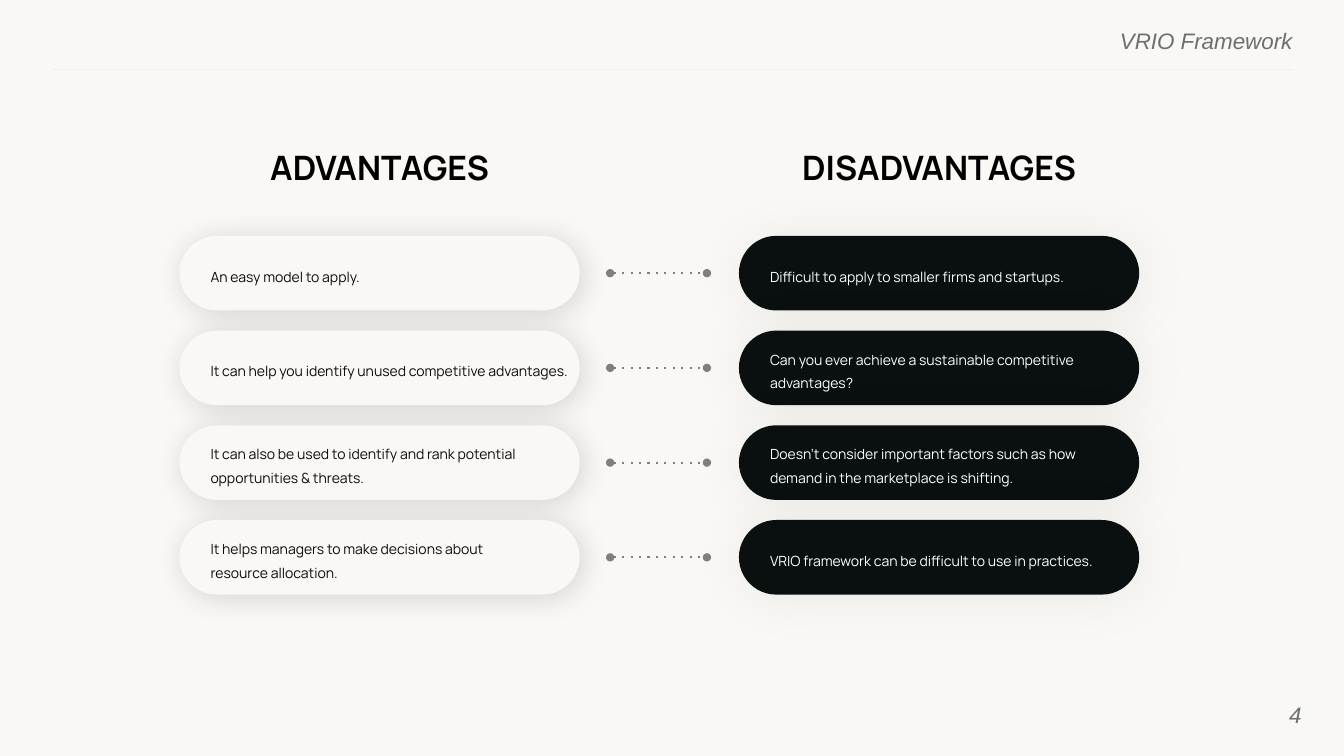
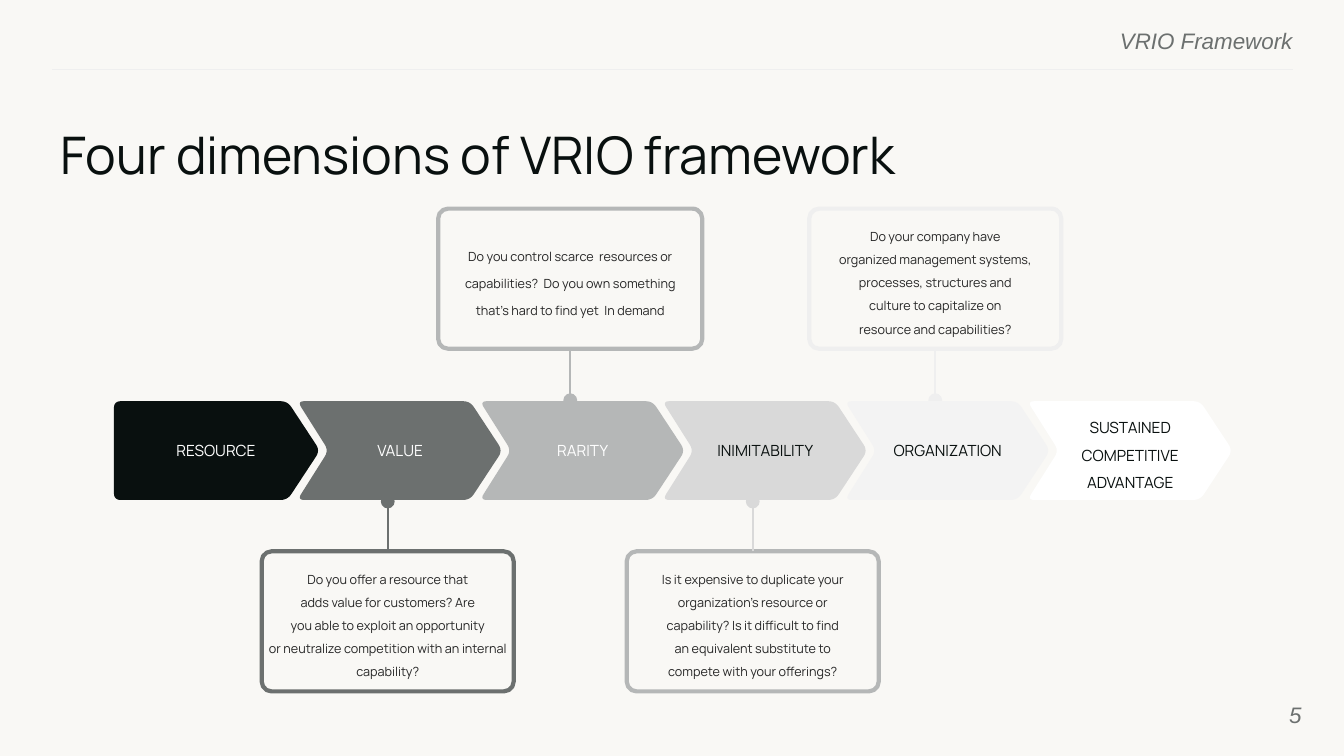
import math

import pptx
import pptx.dml.color
import pptx.enum.shapes
import pptx.enum.text
import pptx.oxml
import pptx.oxml.ns
import pptx.util
from lxml import etree

COLORS = {"paper": "F9F8F5", "rule": "EFEFEF", "slate": "6C706F", "ink": "09100F",
          "body": "0C0C0C", "note": "262626", "black": "000000", "white": "FFFFFF",
          "dots": "7F7F7F", "silver": "B5B7B7", "light": "D9D9D9", "pale": "F3F3F3"}
FONT, FRAME_FONT = "Manrope", "Arial"
SHAPE = pptx.enum.shapes.MSO_SHAPE
ALIGN = pptx.enum.text.PP_ALIGN
ANCHOR = pptx.enum.text.MSO_ANCHOR
SLIDE_W, SLIDE_H = pptx.util.Inches(13.33), pptx.util.Inches(7.5)

# Advantages and disadvantages: the grid has 100 columns and 100 rows
LEFT_COL, RIGHT_COL, COL_W = 13.35, 54.98, 29.78
HEAD_Y, HEAD_H = 19.47, 5.33
PILL_Y, PILL_H, PILL_STEP = 31.2, 9.87, 12.53
ADVANTAGES = [
    ["An easy model to apply."],
    ["It can help you identify unused competitive advantages."],
    ["It can also be used to identify and rank potential opportunities & threats."],
    ["It helps managers to make decisions about", "resource allocation."]]
DISADVANTAGES = [
    ["Difficult to apply to smaller firms and startups."],
    ["Can you ever achieve a sustainable competitive advantages?"],
    ["Doesn’t consider important factors such as how demand in the marketplace is shifting."],
    ["VRIO framework can be difficult to use in practices."]]

# Chain of chevrons and its callouts
CHAIN_X, CHAIN_Y, CHAIN_H, CHAIN_STEP = 8.77, 53.07, 13.07, 13.58
CALLOUT_H, UPPER_Y, LOWER_Y = 18.53, 27.6, 72.93
CHAIN = [("ink", "white", ["RESOURCE"]), ("slate", "white", ["VALUE"]),
         ("silver", "white", ["RARITY"]), ("light", "ink", ["INIMITABILITY"]),
         ("pale", "ink", ["ORGANIZATION"]),
         ("white", "ink", ["SUSTAINED", "COMPETITIVE", "ADVANTAGE"])]
# chevron index, top, width, frame, stem, line spacing, lines
CALLOUTS = [
    (1, LOWER_Y, 18.75, "slate", "slate", 1.53,
     ["Do you offer a resource that", "adds value for customers? Are",
      "you able to exploit an opportunity",
      "or neutralize competition with an internal capability?"]),
    (2, UPPER_Y, 19.65, "silver", "silver", 1.15,
     [("Do you control scarce", "resources or capabilities?", "Do you own something"),
      ("that’s hard to find yet", "In demand")]),
    (3, LOWER_Y, 18.75, "silver", "light", 1.53,
     ["Is it expensive to duplicate your organization’s resource or",
      "capability? Is it difficult to find", "an equivalent substitute to",
      "compete with your offerings?"]),
    (4, UPPER_Y, 18.75, "rule", "rule", 1.53,
     ["Do your company have",
      "organized management systems, processes, structures and",
      "culture to capitalize on", "resource and capabilities?"])]


def col(n):
    return round(SLIDE_W * n / 100)


def row(n):
    return round(SLIDE_H * n / 100)


def grid_box(x, y, w, h):
    return col(x), row(y), col(w), row(h)


def rgb(name):
    return pptx.dml.color.RGBColor.from_string(COLORS[name])


def add_run(p, text, size, color, font=FONT, bold=False, italic=False):
    r = p.add_run()
    r.text = text
    r.font.name, r.font.size = font, pptx.util.Pt(size)
    r.font.bold, r.font.italic = bold, italic
    r.font.color.rgb = rgb(color)


def write(sp, lines, size, color, align=ALIGN.LEFT, spacing=None,
          anchor=ANCHOR.MIDDLE, left=0, right=0, **style):
    """One paragraph a line; the phrases of a tuple are set apart by a wide space."""
    tf = sp.text_frame
    tf.word_wrap = True
    tf.auto_size = pptx.enum.text.MSO_AUTO_SIZE.NONE
    tf.vertical_anchor = anchor
    tf.margin_left, tf.margin_right = pptx.util.Inches(left), pptx.util.Inches(right)
    tf.margin_top = tf.margin_bottom = 0
    for i, line in enumerate(lines):
        p = tf.add_paragraph() if i else tf.paragraphs[0]
        p.alignment = align
        if spacing:
            p.line_spacing = spacing
        for j, phrase in enumerate(line if isinstance(line, tuple) else (line,)):
            if j:
                add_run(p, " ", 14, "black", FRAME_FONT)
            add_run(p, phrase, size, color, **style)


def add_text(s, box, lines, size, color, **style):
    write(s.shapes.add_textbox(*grid_box(*box)), lines, size, color, **style)


def add_line(s, x1, y1, x2, y2, color, width, dash=None, head=None, tail=None):
    """Straight connector; head and tail give the size of an oval end."""
    line = s.shapes.add_connector(pptx.enum.shapes.MSO_CONNECTOR.STRAIGHT,
                                  col(x1), row(y1), col(x2), row(y2))
    line.line.color.rgb = rgb(color)
    line.line.width = pptx.util.Pt(width)
    ln = line.line._get_or_add_ln()
    qn = pptx.oxml.ns.qn
    if dash:
        etree.SubElement(ln, qn("a:prstDash"), val=dash)
    for tag, size in (("a:headEnd", head), ("a:tailEnd", tail)):
        if size:
            etree.SubElement(ln, qn(tag), type="oval", w=size, len=size)
    etree.SubElement(line._element.spPr, qn("a:effectLst"))
    return line


def paint(sp, fill, line=None, width=0):
    sp.shadow.inherit = False
    sp.fill.solid()
    sp.fill.fore_color.rgb = rgb(fill)
    if line:
        sp.line.color.rgb = rgb(line)
        sp.line.width = pptx.util.Pt(width)
    else:
        sp.line.fill.background()


def add_shadow(sp, alpha, blur):
    qn = pptx.oxml.ns.qn
    effects = sp._element.spPr.find(qn("a:effectLst"))
    shadow = etree.SubElement(
        effects, qn("a:outerShdw"), blurRad=str(pptx.util.Pt(blur)),
        dist=str(pptx.util.Pt(3)), dir="2700000", algn="tl", rotWithShape="0")
    color = etree.SubElement(shadow, qn("a:srgbClr"), val=COLORS["black"])
    etree.SubElement(color, qn("a:alpha"), val=str(alpha * 1000))


def add_round_rect(s, box, radius):
    sp = s.shapes.add_shape(SHAPE.ROUNDED_RECTANGLE, *grid_box(*box))
    sp.adjustments[0] = radius
    return sp


def add_page(prs, layout, number):
    """New slide with the running header, its rule and the page number."""
    s = prs.slides.add_slide(prs.slide_layouts[layout])
    frame = dict(font=FRAME_FONT, italic=True, align=ALIGN.RIGHT)
    add_text(s, (57.6, 3.6, 38.57, 3.2), ["VRIO Framework"], 16, "slate",
             anchor=ANCHOR.TOP, **frame)
    add_line(s, 96.17, 9.2, 3.9, 9.2, "rule", 0.75)
    add_text(s, (90.85, 90.67, 6, 7.6), [str(number)], 16, "slate", **frame)
    return s


def add_pill_column(s, x, heading, items, fill, color, alpha, blur, right):
    add_text(s, (x, HEAD_Y, COL_W, HEAD_H), [heading], 24, "black",
             align=ALIGN.CENTER, bold=True)
    for i, lines in enumerate(items):
        sp = add_round_rect(s, (x, PILL_Y + i * PILL_STEP, COL_W, PILL_H), 0.5)
        paint(sp, fill)
        add_shadow(sp, alpha, blur)
        write(sp, lines, 10, color, spacing=1.4, left=0.2, right=right)


def build_comparison(prs):
    s = add_page(prs, 6, 4)
    add_pill_column(s, LEFT_COL, "ADVANTAGES", ADVANTAGES, "paper", "body", 15, 22.2, 0)
    add_pill_column(s, RIGHT_COL, "DISADVANTAGES", DISADVANTAGES, "ink", "white",
                    5, 39.4, 0.2)
    for i in range(len(ADVANTAGES)):
        y = PILL_Y + i * PILL_STEP + PILL_H / 2
        add_line(s, 45.4, y, 52.6, y, "dots", 1.5, "dot", "med", "med")


def round_corners(corners, trim):
    """Points of the outline with each corner replaced by a short curve."""
    points = []
    for i, (cx, cy) in enumerate(corners):
        ends = []
        for nx, ny in (corners[i - 1], corners[(i + 1) % len(corners)]):
            share = trim / math.hypot(nx - cx, ny - cy)
            ends.append((cx + (nx - cx) * share, cy + (ny - cy) * share))
        (ax, ay), (bx, by) = ends
        for step in range(7):
            t = step / 6
            a, c, b = (1 - t) ** 2, 2 * t * (1 - t), t ** 2
            points.append((round(a * ax + c * cx + b * bx),
                           round(a * ay + c * cy + b * by)))
    return points


def add_chevron(s, x, y, h, fill, color, lines, flat):
    """Chevron in the box at x, y; a flat one has a straight left edge."""
    mid, bottom = y + h / 2, y + h
    back = x - (0.29 if flat else 0.22)
    corners = [(back, y), (x + 12.62, y), (x + 15.04, mid), (x + 12.62, bottom),
               (back, bottom)]
    if not flat:
        corners.append((x + 2.1, mid))
    points = round_corners([(col(cx), row(cy)) for cx, cy in corners],
                           pptx.util.Inches(0.07))
    outline = s.shapes.build_freeform(*points[0])
    outline.add_line_segments(points[1:], close=True)
    sp = outline.convert_to_shape()
    paint(sp, fill)
    write(sp, lines, 11, color, align=ALIGN.CENTER,
          spacing=1.47 if len(lines) > 1 else None)


def add_callout(s, center, y, w, frame, stem, spacing, lines):
    sp = add_round_rect(s, (center - w / 2, y, w, CALLOUT_H), 0.07)
    paint(sp, "paper", frame, 3)
    write(sp, lines, 9, "note", align=ALIGN.CENTER, spacing=spacing)
    above = y < CHAIN_Y
    start = y + CALLOUT_H if above else y
    end = CHAIN_Y - 0.13 if above else CHAIN_Y + CHAIN_H + 0.2
    line = add_line(s, center, start, center, end, stem, 1.5, tail="lg")
    line.begin_connect(sp, 2 if above else 0)


def build_dimensions(prs):
    s = add_page(prs, 5, 5)
    title = s.shapes.title
    title.left, title.top, title.width, title.height = grid_box(4.5, 16.27, 92.25, 9.07)
    write(title, ["Four dimensions of VRIO framework"], 37, "ink", anchor=ANCHOR.TOP)
    title.text_frame.paragraphs[0].space_after = pptx.util.Pt(13)
    for i, *callout in CALLOUTS:
        add_callout(s, CHAIN_X + i * CHAIN_STEP + 6.5, *callout)
    for i, link in enumerate(CHAIN):
        add_chevron(s, CHAIN_X + i * CHAIN_STEP, CHAIN_Y, CHAIN_H, *link, flat=i == 0)


def main():
    prs = pptx.Presentation()
    prs.slide_width, prs.slide_height = SLIDE_W, SLIDE_H
    background = prs.slide_master.background.fill
    background.solid()
    background.fore_color.rgb = rgb("paper")
    build_comparison(prs)
    build_dimensions(prs)
    prs.save("out.pptx")


if __name__ == "__main__":
    main()
